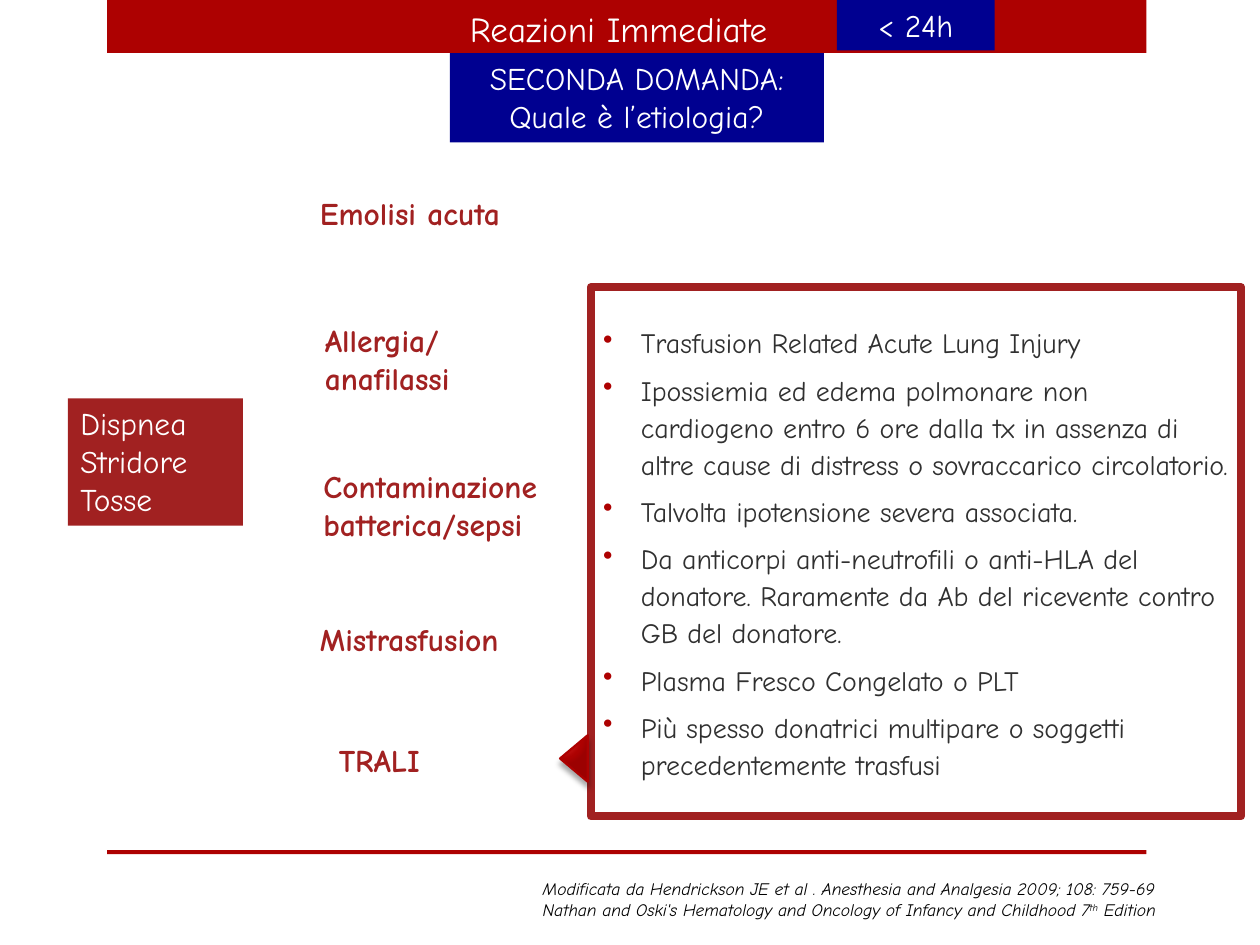
from pptx import Presentation
from pptx.dml.color import RGBColor
from pptx.enum.shapes import MSO_SHAPE
from pptx.enum.text import MSO_ANCHOR, MSO_AUTO_SIZE, PP_ALIGN
from pptx.oxml import parse_xml
from pptx.oxml.ns import nsdecls, qn
from pptx.util import Cm, Pt

# Content: boxes are left, top, width, height in cm
TITLE = ("Reazioni Immediate", (9.22, 0.03, 7.19, 1.12))
BANDS = [(2.16, 0, 20.95, 1.07), (2.16, 17.14, 20.95, 0.08)]
LABELS = [
    (["SECONDA DOMANDA:", "Quale è l’etiologia?"], (9.07, 1.07, 7.54, 1.8), "blue", PP_ALIGN.CENTER),
    (["< 24h"], (16.87, 0, 3.18, 1.02), "blue", PP_ALIGN.CENTER),
    (["Dispnea Stridore Tosse"], (1.37, 8.03, 3.53, 2.57), "brick", PP_ALIGN.LEFT),
]
CAUSES = [
    (["Emolisi acuta"], (6.2, 3.78, 11.5, 1.02)),
    (["Allergia/", "anafilassi"], (6.3, 6.35, 11.5, 1.8)),
    (["Contaminazione batterica/sepsi"], (6.27, 9.3, 6.4, 1.8)),
    (["Mistrasfusion"], (6.2, 12.37, 6.4, 1.02)),
    (["TRALI"], (6.58, 14.81, 11.5, 1.02)),
]
PANEL_BOX = (11.91, 5.79, 13.11, 10.67)
POINTER_BOX = (11.1, 15.01, 0.94, 0.56)
TRALI_FACTS = [
    "Trasfusion Related Acute Lung Injury",
    "Ipossiemia ed edema polmonare non cardiogeno entro 6 ore dalla tx in assenza di "
    "altre cause di distress o sovraccarico circolatorio.",
    "Talvolta ipotensione severa associata.",
    "Da anticorpi anti-neutrofili o anti-HLA del donatore. Raramente da Ab del ricevente "
    "contro GB del donatore.",
    "Plasma Fresco Congelato o PLT",
    "Più spesso donatrici multipare o soggetti precedentemente trasfusi",
]
SOURCES_BOX = (10.69, 17.58, 14.15, 1.96)
SOURCES = [
    "Modificata da Hendrickson JE et al . Anesthesia and Analgesia 2009; 108: 759-69",
    "Nathan and Oski's Hematology and Oncology of Infancy and Childhood 7",
]
EDITION = [("th", 30000), (" Edition", 0)]

THEME = {
    "font": "Comic Neue",
    "red": "AD0101", "brick": "A12121", "blue": "000090",
    "white": "FFFFFF", "black": "000000", "grey": "303030",
    "title": 20, "label": 18, "fact": 16, "source": 10,
    "pointer": [(0, "E62F2F"), (76, "AD0101"), (100, "9C0101")],
}


def color(name):
    return RGBColor.from_string(THEME[name])


def add_block(slide, box, fill, line=None, width=0, preset=MSO_SHAPE.RECTANGLE):
    shape = slide.shapes.add_shape(preset, *map(Cm, box))
    shape.shadow.inherit = False
    shape.fill.solid()
    shape.fill.fore_color.rgb = color(fill)
    if line:
        shape.line.color.rgb = color(line)
        shape.line.width = Pt(width)
    else:
        shape.line.fill.background()
    return shape


def write(shape, lines, size, ink, align=PP_ALIGN.LEFT, anchor=MSO_ANCHOR.TOP,
          bold=False, italic=False):
    frame = shape.text_frame
    frame.text = "\n".join(lines)
    frame.word_wrap = True
    frame.auto_size = MSO_AUTO_SIZE.NONE
    frame.vertical_anchor = anchor
    for paragraph in frame.paragraphs:
        paragraph.alignment = align
        for run in paragraph.runs:
            style(run, size, ink, bold, italic)
    return frame


def style(run, size, ink, bold=False, italic=False):
    font = run.font
    font.name, font.size = THEME["font"], Pt(THEME[size])
    font.bold, font.italic = bold, italic
    font.color.rgb = color(ink)


def add_bullet(paragraph):
    properties = paragraph._p.get_or_add_pPr()
    properties.set("marL", str(Cm(0.76)))
    properties.set("indent", str(Cm(-0.76)))
    for xml in (f'<a:buClr {nsdecls("a")}><a:srgbClr val="{THEME["red"]}"/></a:buClr>',
                f'<a:buChar {nsdecls("a")} char="•"/>'):
        properties.append(parse_xml(xml))
    paragraph.line_spacing = 1.1
    paragraph.space_after = Pt(6)


def add_glow_and_shadow(shape):
    stops = "".join(f'<a:gs pos="{position * 1000}"><a:srgbClr val="{value}"/></a:gs>'
                    for position, value in THEME["pointer"])
    gradient = parse_xml(
        f'<a:gradFill {nsdecls("a")} rotWithShape="1"><a:gsLst>{stops}</a:gsLst>'
        '<a:path path="circle"><a:fillToRect l="15000" t="15000" r="100000" b="100000"/>'
        '</a:path></a:gradFill>')
    shadow = parse_xml(
        f'<a:outerShdw {nsdecls("a")} blurRad="{Pt(3)}" dist="{Pt(3)}" dir="5400000" '
        f'rotWithShape="0"><a:srgbClr val="{THEME["black"]}"><a:alpha val="35000"/>'
        '</a:srgbClr></a:outerShdw>')
    properties = shape.element.spPr
    properties.replace(properties.find(qn("a:solidFill")), gradient)
    properties.find(qn("a:effectLst")).append(shadow)


def main():
    presentation = Presentation()
    presentation.slide_width, presentation.slide_height = Cm(25.4), Cm(19.05)
    slide = presentation.slides.add_slide(presentation.slide_layouts[5])

    # Red bands, with the title brought in front of them
    for box in BANDS:
        add_block(slide, box, "red")
    title = slide.shapes.title
    text, box = TITLE
    title.left, title.top, title.width, title.height = map(Cm, box)
    write(title, [text], "title", "white")
    slide.shapes.element.append(title.element)

    # Question, time window and symptoms
    for lines, box, fill, align in LABELS:
        write(add_block(slide, box, fill), lines, "label", "white", align)

    # Possible causes
    for lines, box in CAUSES:
        write(slide.shapes.add_textbox(*map(Cm, box)), lines, "label", "brick", bold=True)

    # TRALI panel and its pointer
    panel = add_block(slide, PANEL_BOX, "white", "brick", 4.5)
    facts = write(panel, TRALI_FACTS, "fact", "grey", anchor=MSO_ANCHOR.MIDDLE)
    for paragraph in facts.paragraphs:
        add_bullet(paragraph)
    pointer = add_block(slide, POINTER_BOX, "red", "red", 1.25, MSO_SHAPE.ISOSCELES_TRIANGLE)
    pointer.rotation = 270
    add_glow_and_shadow(pointer)

    # Sources
    sources = write(slide.shapes.add_textbox(*map(Cm, SOURCES_BOX)), SOURCES,
                    "source", "black", italic=True)
    for text, baseline in EDITION:
        run = sources.paragraphs[-1].add_run()
        run.text = text
        style(run, "source", "black", italic=True)
        run.font._element.set("baseline", str(baseline))

    presentation.save("out.pptx")


if __name__ == "__main__":
    main()
